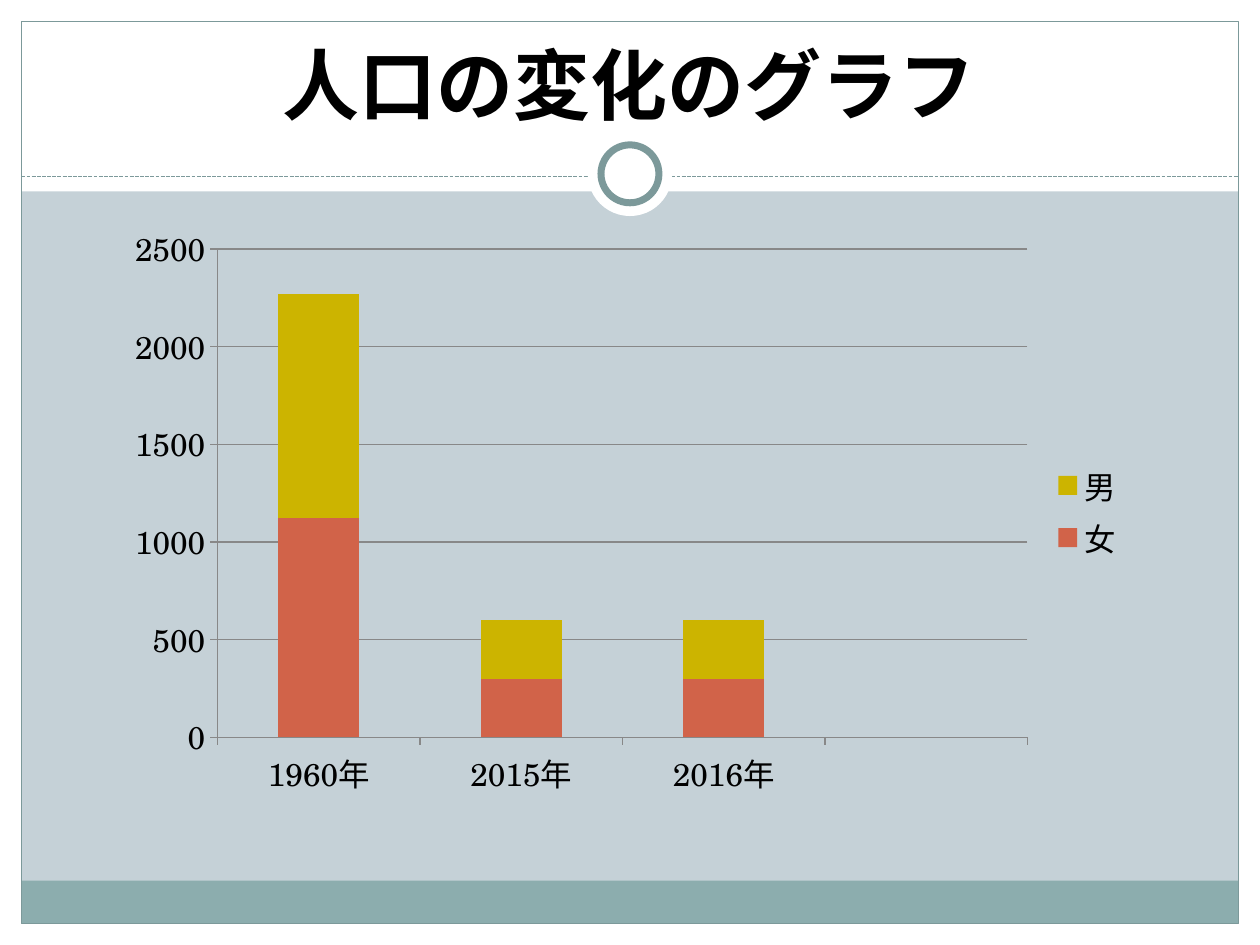
from lxml import etree
from pptx import Presentation
from pptx.chart.data import CategoryChartData
from pptx.dml.color import RGBColor
from pptx.enum.chart import XL_CHART_TYPE, XL_LEGEND_POSITION, XL_TICK_MARK
from pptx.enum.dml import MSO_LINE
from pptx.enum.shapes import MSO_CONNECTOR, MSO_SHAPE
from pptx.enum.text import MSO_ANCHOR, PP_ALIGN
from pptx.oxml.ns import qn
from pptx.util import Inches, Pt

FONT = "TeX Gyre Schola"
WHITE, BLACK, TEAL, GRAY = "FFFFFF", "000000", "7C999A", "888888"


def rgb(value):
    """Turn a hex string into a colour."""
    return RGBColor.from_string(value)


def box_of(box):
    """Turn a box in inches into lengths."""
    return [Inches(v) for v in box]


def set_font(font, color=BLACK, **values):
    """Set font attributes and colour."""
    for name, value in {"name": FONT, **values}.items():
        setattr(font, name, value)
    font.color.rgb = rgb(color)


def add_shape(s, kind, box, fill=None, line=None, width=0.75):
    """Add a flat preset shape."""
    sp = s.shapes.add_shape(kind, *box_of(box))
    sp.shadow.inherit = False
    if fill:
        sp.fill.solid()
        sp.fill.fore_color.rgb = rgb(fill)
    else:
        sp.fill.background()
    if line:
        sp.line.color.rgb = rgb(line)
        sp.line.width = Pt(width)
    else:
        sp.line.fill.background()


def add_frame(s, box):
    """Draw the white margins, footer band, border, divider and ring."""
    x, y, w, h = box
    m, top = 0.17, 1.52
    right, bottom = x + w - m, y + h - m
    for part in [(x, bottom, w, m), (x, y, w, top), (x, y, m, h), (right, y, m, h)]:
        add_shape(s, MSO_SHAPE.RECTANGLE, part, WHITE)
    add_shape(s, MSO_SHAPE.RECTANGLE, (x + m, bottom - 0.34, w - 2 * m, 0.34), "8CADAE")
    add_shape(s, MSO_SHAPE.RECTANGLE, (x + m, y + m, w - 2 * m, h - 2 * m), line=TEAL)

    divider = y + 1.4
    ln = s.shapes.add_connector(
        MSO_CONNECTOR.STRAIGHT, *box_of((x + m, divider, right, divider)))
    ln.line.color.rgb = rgb(TEAL)
    ln.line.width = Pt(0.75)
    ln.line.dash_style = MSO_LINE.SQUARE_DOT
    etree.SubElement(ln._element.spPr, qn("a:effectLst"))

    cx, cy = x + w / 2, y + 1.38
    for d, line in [(0.67, None), (0.46, TEAL)]:
        add_shape(s, MSO_SHAPE.OVAL, (cx - d / 2, cy - d / 2, d, d), WHITE, line, 4)


def add_title(s, box, text):
    """Add the centred title."""
    tf = s.shapes.add_textbox(*box_of(box)).text_frame
    tf.word_wrap = True
    tf.vertical_anchor = MSO_ANCHOR.BOTTOM
    p = tf.paragraphs[0]
    p.alignment = PP_ALIGN.CENTER
    r = p.add_run()
    r.text = text
    set_font(r.font, size=Pt(44), bold=True)


def add_population_chart(s, box):
    """Add the stacked columns of population by sex."""
    data = CategoryChartData()
    data.categories = ["1960年", "2015年", "2016年", ""]
    data.add_series("女", [1120, 300, 300, None])
    data.add_series("男", [1150, 300, 300, None])
    chart = s.shapes.add_chart(
        XL_CHART_TYPE.COLUMN_STACKED, *box_of(box), data).chart
    set_font(chart.font, size=Pt(18))
    chart.has_title = False
    chart.has_legend = True
    chart.legend.position = XL_LEGEND_POSITION.RIGHT
    chart.legend.include_in_layout = False

    plot = chart.plots[0]
    for name, value in {"gap_width": 150, "overlap": 100, "vary_by_categories": False}.items():
        setattr(plot, name, value)
    for series, color in zip(plot.series, ["D16349", "CCB400"]):
        series.format.fill.solid()
        series.format.fill.fore_color.rgb = rgb(color)

    value_axis = chart.value_axis
    limits = {"minimum_scale": 0, "maximum_scale": 2500, "major_unit": 500,
              "has_major_gridlines": True}
    for name, value in limits.items():
        setattr(value_axis, name, value)
    for axis in (chart.category_axis, value_axis):
        axis.major_tick_mark = XL_TICK_MARK.OUTSIDE
    for part in (chart.category_axis, value_axis, value_axis.major_gridlines):
        part.format.line.color.rgb = rgb(GRAY)
        part.format.line.width = Pt(0.75)


def main():
    """Build and save the slide."""
    prs = Presentation()
    prs.slide_width, prs.slide_height = Inches(10), Inches(7.5)
    s = prs.slides.add_slide(prs.slide_layouts[6])
    s.background.fill.solid()
    s.background.fill.fore_color.rgb = rgb("C5D1D7")
    add_frame(s, (0, 0, 10, 7.5))
    add_title(s, (0.33, 0.25, 9.33, 0.83), "人口の変化のグラフ")
    add_population_chart(s, (0.91, 1.7, 8.11, 4.72))
    prs.save("out.pptx")


if __name__ == "__main__":
    main()
